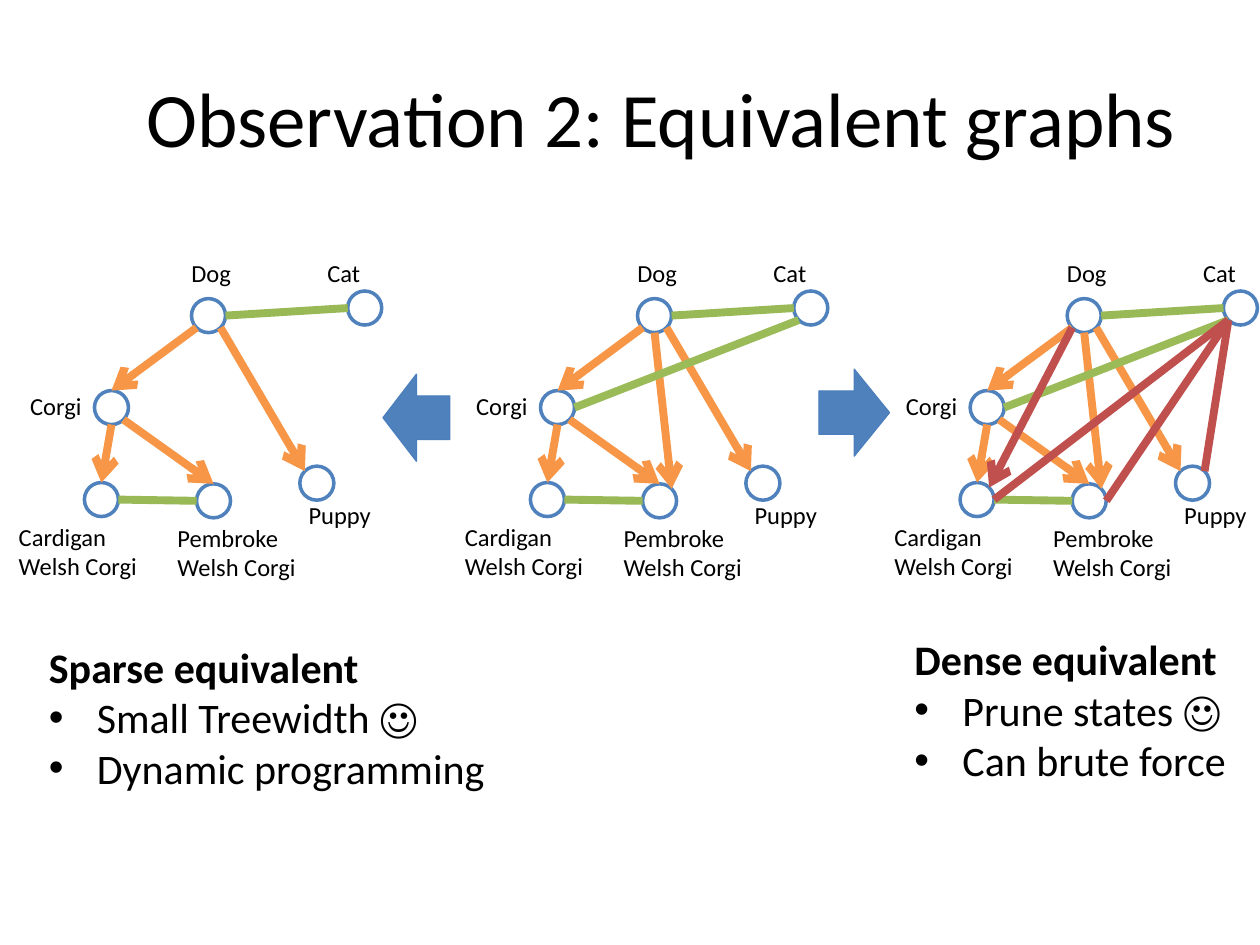
from math import cos, pi, sin

from lxml.etree import SubElement
from pptx import Presentation
from pptx.dml.color import RGBColor
from pptx.enum.shapes import MSO_CONNECTOR as Connector, MSO_SHAPE as Shape
from pptx.enum.text import MSO_ANCHOR as Anchor, PP_ALIGN as Align
from pptx.oxml.ns import qn
from pptx.util import Inches, Pt

COLORS = {
    "text": "000000", "node": "FFFFFF", "outline": "4F81BD",
    "block": "4F81BD", "block_line": "4B7EBC",
    "subset": "F79646", "exclusion": "98B955", "extra": "9BBB59",
    "implied": "C0504D",
}
FONT = "Calibri"
NODE_SIZE = 0.27

# Node corners and label boxes, relative to the corner of a graph
NODES = {
    "Dog": (1.47, 0.37), "Corgi": (0.7, 1.1), "Puppy": (2.33, 1.7),
    "Cat": (2.71, 0.31), "Pembroke": (1.51, 1.84), "Cardigan": (0.62, 1.83),
}
LABELS = [
    ("Dog", 1.37, 0, 0.63, 0.35), ("Cat", 2.45, 0, 0.63, 0.35),
    ("Corgi", 0.09, 1.05, 0.95, 0.35), ("Puppy", 2.3, 1.92, 1.01, 0.35),
    ("Pembroke Welsh Corgi", 1.26, 2.1, 1.21, 0.57),
    ("Cardigan Welsh Corgi", 0, 2.09, 1.21, 0.57),
]

# Edges: start node, its site, end node, its site, colour, arrow.
# Sites run counterclockwise from the top of the circle, 0 to 7.
SPARSE_EDGES = [
    ("Dog", 3, "Corgi", 0, "subset", True),
    ("Dog", 5, "Puppy", 1, "subset", True),
    ("Corgi", 5, "Pembroke", 0, "subset", True),
    ("Corgi", 4, "Cardigan", 0, "subset", True),
    ("Dog", 6, "Cat", 2, "exclusion", False),
    ("Cardigan", 6, "Pembroke", 2, "exclusion", False),
]
MIDDLE_EDGES = SPARSE_EDGES + [
    ("Dog", 4, "Pembroke", 7, "subset", True),
    ("Corgi", 6, "Cat", 3, "extra", False),
]
DENSE_EDGES = MIDDLE_EDGES + [
    ("Cardigan", 6, "Cat", 3, "implied", False),
    ("Pembroke", 6, "Cat", 3, "implied", False),
    ("Puppy", 7, "Cat", 3, "implied", False),
    ("Dog", 3, "Cardigan", 7, "implied", True),
]


def color(name):
    return RGBColor.from_string(COLORS[name])


def add_text(slide, lines, left, top, width, height, size=14, align=Align.LEFT,
             anchor=Anchor.TOP, heading=False):
    """Add a text box; with heading, the first line is bold and the rest bulleted."""
    box = slide.shapes.add_textbox(Inches(left), Inches(top), Inches(width), Inches(height))
    frame = box.text_frame
    frame.word_wrap = True
    frame.vertical_anchor = anchor
    for index, line in enumerate(lines):
        paragraph = frame.paragraphs[0] if index == 0 else frame.add_paragraph()
        paragraph.alignment = align
        run = paragraph.add_run()
        run.text = line
        run.font.name = FONT
        run.font.size = Pt(size)
        run.font.bold = heading and index == 0
        run.font.color.rgb = color("text")
        if heading and index > 0:
            add_bullet(paragraph)


def add_bullet(paragraph):
    properties = paragraph._p.get_or_add_pPr()
    properties.set("marL", str(Inches(0.38)))
    properties.set("indent", str(-Inches(0.38)))
    SubElement(properties, qn("a:buFont")).set("typeface", "Arial")
    SubElement(properties, qn("a:buChar")).set("char", "•")


def add_filled_shape(slide, kind, left, top, width, height, fill, line, line_width):
    shape = slide.shapes.add_shape(kind, Inches(left), Inches(top), Inches(width), Inches(height))
    shape.shadow.inherit = False
    shape.fill.solid()
    shape.fill.fore_color.rgb = color(fill)
    shape.line.color.rgb = color(line)
    shape.line.width = Pt(line_width)


def site_point(node, site):
    """Return the point at one of the eight sites of a node's circle."""
    x, y = NODES[node]
    radius = NODE_SIZE / 2
    angle = site * pi / 4
    return x + radius - radius * sin(angle), y + radius - radius * cos(angle)


def add_edge(slide, start, end, line_color, arrow):
    points = [Inches(value) for value in (*start, *end)]
    edge = slide.shapes.add_connector(Connector.STRAIGHT, *points)
    edge.line.color.rgb = color(line_color)
    edge.line.width = Pt(4.5)
    if arrow:
        SubElement(edge.line._get_or_add_ln(), qn("a:tailEnd")).set("type", "arrow")
    SubElement(edge._element.spPr, qn("a:effectLst"))


def add_graph(slide, left, top, edges):
    for x, y in NODES.values():
        add_filled_shape(slide, Shape.OVAL, left + x, top + y, NODE_SIZE, NODE_SIZE,
                         "node", "outline", 2)
    for start, start_site, end, end_site, line_color, arrow in edges:
        (x1, y1), (x2, y2) = site_point(start, start_site), site_point(end, end_site)
        add_edge(slide, (left + x1, top + y1), (left + x2, top + y2), line_color, arrow)
    for label, x, y, width, height in LABELS:
        add_text(slide, [label], left + x, top + y, width, height)


def main():
    presentation = Presentation()
    presentation.slide_width = Inches(10)
    presentation.slide_height = Inches(7.5)
    slide = presentation.slides.add_slide(presentation.slide_layouts[6])

    # Title
    add_text(slide, ["Observation 2: Equivalent graphs"], 0.5, 0.3, 9.5, 1.25,
             size=44, align=Align.CENTER, anchor=Anchor.MIDDLE)

    # Equivalent graphs, from sparse to dense
    for left, edges in ((0.05, SPARSE_EDGES), (3.59, MIDDLE_EDGES), (7, DENSE_EDGES)):
        add_graph(slide, left, 2, edges)

    # Block arrows from the middle graph
    add_filled_shape(slide, Shape.LEFT_ARROW, 3.04, 2.97, 0.53, 0.69,
                     "block", "block_line", 0.75)
    add_filled_shape(slide, Shape.RIGHT_ARROW, 6.5, 2.93, 0.56, 0.69,
                     "block", "block_line", 0.75)

    # Benefits of each equivalent
    add_text(slide, ["Sparse equivalent", "Small Treewidth ☺", "Dynamic programming"],
             0.29, 5.04, 4.67, 1.31, size=24, heading=True)
    add_text(slide, ["Dense equivalent", "Prune states ☺", "Can brute force"],
             7.16, 4.98, 3.63, 1.31, size=24, heading=True)

    presentation.save("out.pptx")


if __name__ == "__main__":
    main()
